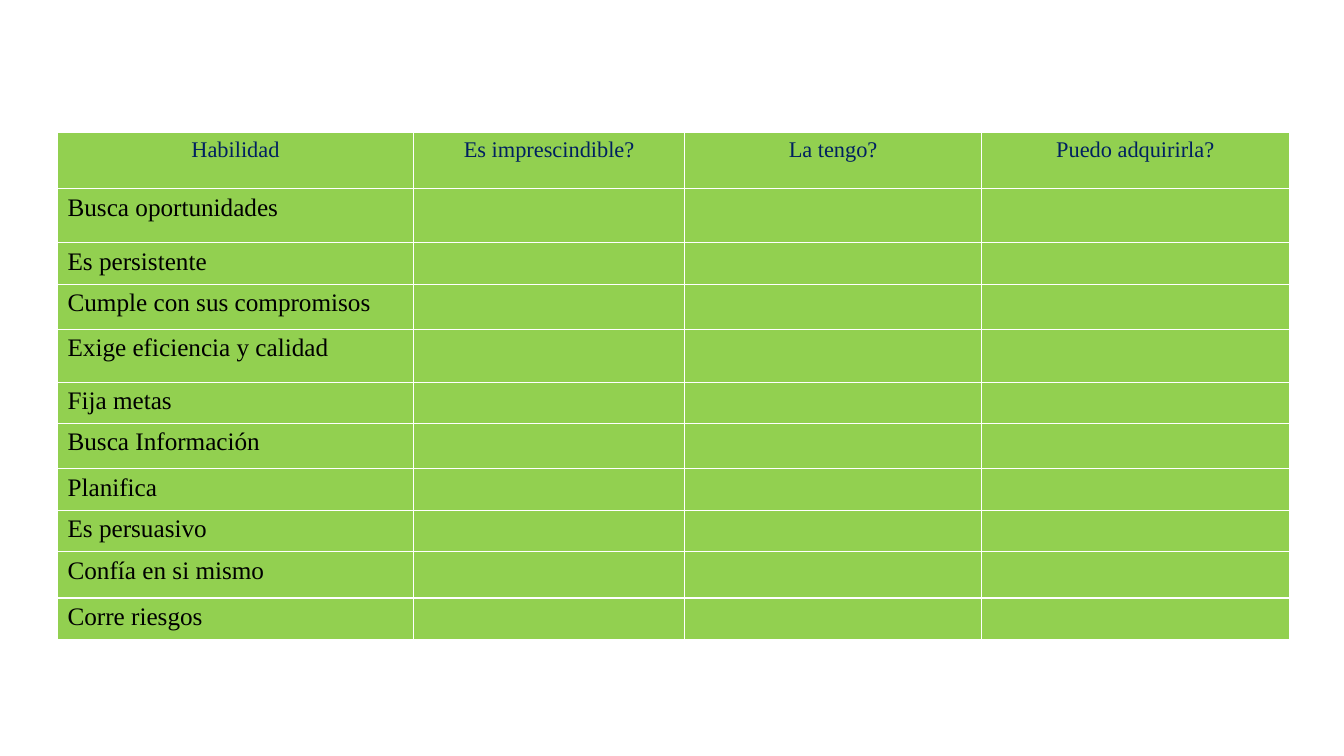
from pptx import Presentation
from pptx.dml.color import RGBColor
from pptx.enum.text import PP_ALIGN as Align
from pptx.util import Cm, Pt

# Content: headings with column widths, skills with row heights (cm)
HEADINGS = [
    ("Habilidad", 8.97),
    ("Es imprescindible?", 6.84),
    ("La tengo?", 7.47),
    ("Puedo adquirirla?", 7.76),
]
HEADING_HEIGHT = 1.42
SKILLS = [
    ("Busca oportunidades", 1.37),
    ("Es persistente", 1.04),
    ("Cumple con sus compromisos", 1.14),
    ("Exige eficiencia y calidad", 1.33),
    ("Fija metas", 1.04),
    ("Busca Información", 1.14),
    ("Planifica", 1.05),
    ("Es persuasivo", 1.04),
    ("Confía en si mismo", 1.17),
    ("Corre riesgos", 1.04),
]
LEFT, TOP = 1.45, 3.33
GREEN, NAVY, BLACK = "92D050", "002060", "000000"
FONT = "Times New Roman"


def color(hex_code):
    return RGBColor.from_string(hex_code)


def write(cell, text, size, ink, align):
    paragraph = cell.text_frame.paragraphs[0]
    paragraph.text = text
    paragraph.alignment = align
    font = paragraph.font
    font.name, font.size, font.bold = FONT, Pt(size), False
    font.color.rgb = color(ink)


def main():
    prs = Presentation()
    prs.slide_width, prs.slide_height = Cm(33.87), Cm(19.05)
    slide = prs.slides.add_slide(prs.slide_layouts[6])

    # Table grid; its default style draws the white rules
    widths = [width for _, width in HEADINGS]
    heights = [HEADING_HEIGHT] + [height for _, height in SKILLS]
    checklist = slide.shapes.add_table(
        len(heights), len(widths), Cm(LEFT), Cm(TOP),
        Cm(sum(widths)), Cm(sum(heights))).table
    for column, width in zip(checklist.columns, widths):
        column.width = Cm(width)
    for row, height in zip(checklist.rows, heights):
        row.height = Cm(height)
    for cell in checklist.iter_cells():
        cell.fill.solid()
        cell.fill.fore_color.rgb = color(GREEN)

    # Headings across the top, skills down the first column
    for col, (heading, _) in enumerate(HEADINGS):
        write(checklist.cell(0, col), heading, 16, NAVY, Align.CENTER)
    for row, (skill, _) in enumerate(SKILLS, start=1):
        write(checklist.cell(row, 0), skill, 18, BLACK, Align.LEFT)

    prs.save("out.pptx")


if __name__ == "__main__":
    main()
